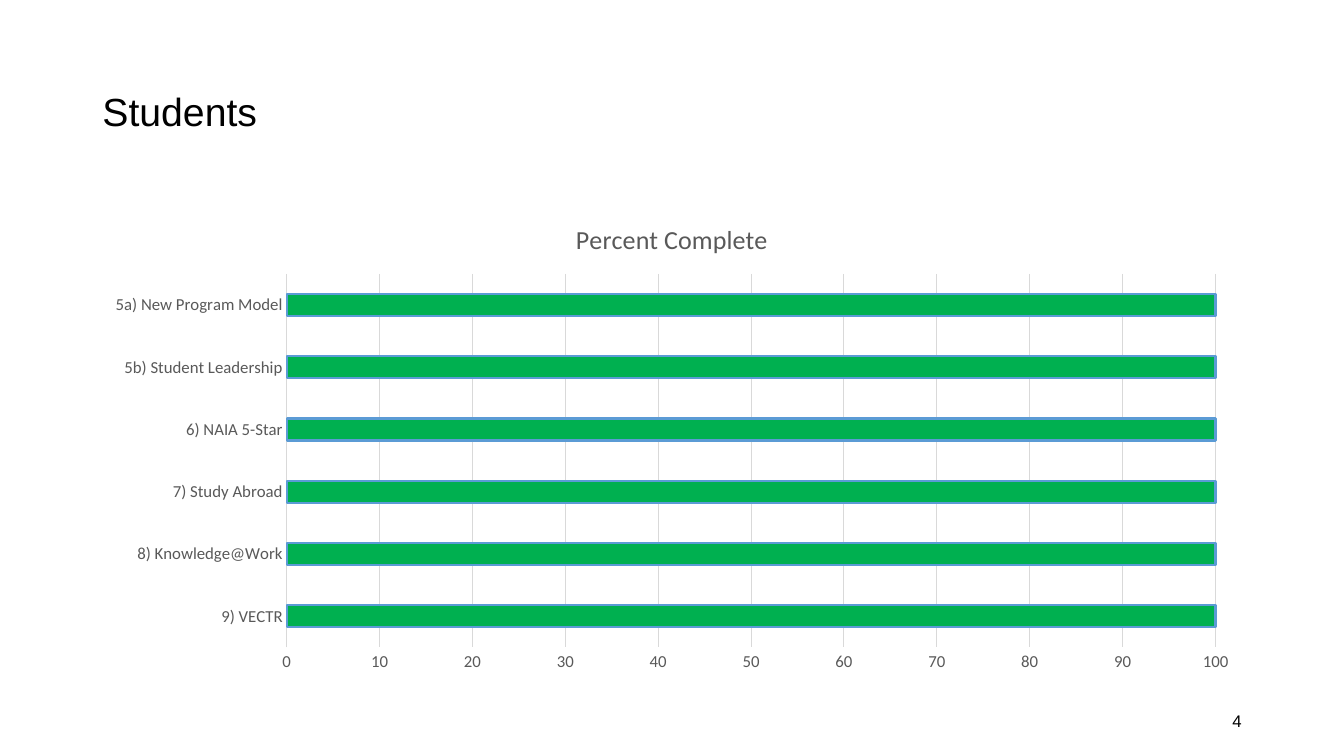
from pptx import Presentation
from pptx.chart.data import CategoryChartData
from pptx.dml.color import RGBColor
from pptx.enum import chart as ch, text
from pptx.util import Pt

COLORS = {"text": "000000", "label": "595959", "grid": "D9D9D9",
          "bar": "00B050", "outline": "5B9BD5"}
GOALS = ["5a) New Program Model", "5b) Student Leadership", "6) NAIA 5-Star",
         "7) Study Abroad", "8) Knowledge@Work", "9) VECTR"]
COMPLETE = 100


def rgb(name):
    return RGBColor.from_string(COLORS[name])


def set_font(font, name, size, color):
    font.name, font.size, font.bold = name, Pt(size), False
    font.color.rgb = rgb(color)


def set_line(line, color, width):
    line.color.rgb = rgb(color)
    line.width = Pt(width)


def write(sp, content, size, align):
    tf = sp.text_frame
    tf.word_wrap = True
    tf.auto_size = text.MSO_AUTO_SIZE.NONE
    tf.vertical_anchor = text.MSO_ANCHOR.MIDDLE
    p = tf.paragraphs[0]
    p.text = content
    p.alignment = align
    set_font(p.font, "Arial", size, "text")
    return p


def add_title(s, content):
    sp = s.shapes.title
    sp.left, sp.top, sp.width, sp.height = Pt(66), Pt(28.75), Pt(828), Pt(104.4)
    write(sp, content, 28, text.PP_ALIGN.LEFT).line_spacing = 0.9


def add_page_number(s, number):
    sp = s.shapes.add_textbox(Pt(678), Pt(500.5), Pt(216), Pt(28.75))
    write(sp, number, 12, text.PP_ALIGN.RIGHT)


def format_axis(axis):
    axis.major_tick_mark = axis.minor_tick_mark = ch.XL_TICK_MARK.NONE
    set_font(axis.tick_labels.font, "Calibri", 12, "label")


def add_progress_chart(s):
    data = CategoryChartData()
    data.categories = GOALS[::-1]
    data.add_series("Series 1", [COMPLETE] * len(GOALS))
    chart = s.shapes.add_chart(ch.XL_CHART_TYPE.BAR_CLUSTERED, Pt(66), Pt(143.75),
                               Pt(828), Pt(342.65), data).chart
    set_font(chart.font, "Calibri", 10, "text")
    chart.has_legend = False
    chart.has_title = True
    p = chart.chart_title.text_frame.paragraphs[0]
    p.text = "Percent Complete"
    set_font(p.font, "Calibri", 18.6, "label")
    chart.chart_title.include_in_layout = False

    format_axis(chart.category_axis)
    set_line(chart.category_axis.format.line, "grid", 0.75)
    values = chart.value_axis
    format_axis(values)
    values.minimum_scale, values.maximum_scale, values.major_unit = 0, 100, 10
    values.format.line.fill.background()
    values.has_major_gridlines = True
    set_line(values.major_gridlines.format.line, "grid", 0.75)

    plot = chart.plots[0]
    plot.gap_width = 182
    plot.vary_by_categories = False
    bars = plot.series[0].format
    bars.fill.solid()
    bars.fill.fore_color.rgb = rgb("bar")
    set_line(bars.line, "outline", 1.5)


def main():
    prs = Presentation()
    prs.slide_width, prs.slide_height = Pt(960), Pt(540)
    s = prs.slides.add_slide(prs.slide_layouts[5])
    add_title(s, "Students")
    add_progress_chart(s)
    add_page_number(s, "4")
    prs.save("out.pptx")


if __name__ == "__main__":
    main()
